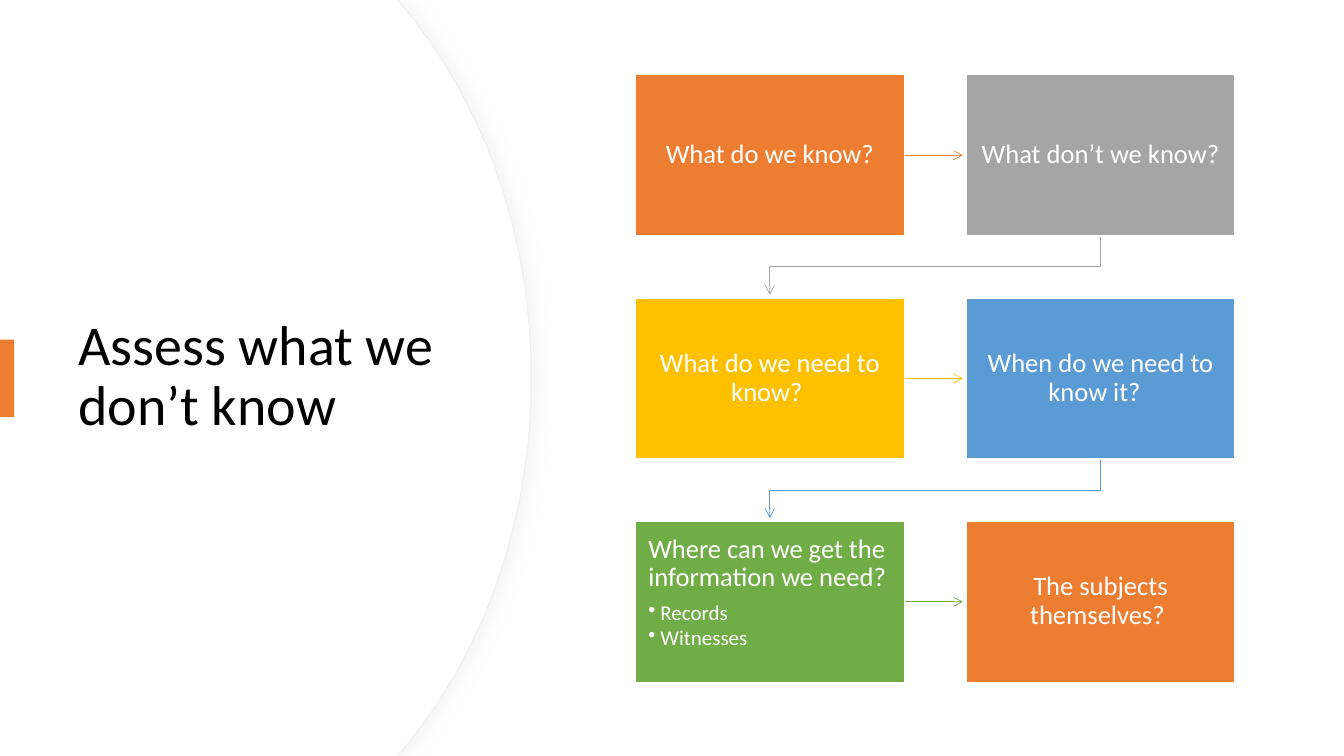
from collections import namedtuple
from dataclasses import dataclass

from lxml import etree
from pptx import Presentation
from pptx import util as u
from pptx.dml.color import RGBColor
from pptx.enum import shapes, text
from pptx.oxml.ns import qn

Box = namedtuple("Box", "left top width height")


@dataclass(frozen=True)
class Theme:
    font: str = "Calibri"
    title_size: float = 40
    card_size: float = 19
    bullet_size: float = 15
    white: str = "FFFFFF"
    black: str = "000000"
    edge: str = "EFEFEF"
    shade: str = "D9D9D9"
    orange: str = "ED7D31"
    gray: str = "A5A5A5"
    gold: str = "FFC000"
    blue: str = "5B9BD5"
    green: str = "70AD47"


THEME = Theme()
CARDS = [
    (THEME.orange, "What do we know?", []),
    (THEME.gray, "What don’t we know? ", []),
    (THEME.gold, "What do we need to know? ", []),
    (THEME.blue, "When do we need to know it?  ", []),
    (THEME.green, "Where can we get the information we need?", ["Records", "Witnesses"]),
    (THEME.orange, "The subjects themselves? ", []),
]


def apply_format(target, values):
    for name, value in values.items():
        setattr(target, name, value)


def emu(lengths):
    return [u.Inches(length) for length in lengths]


def add_xml(parent, tag, **values):
    node = etree.SubElement(parent, qn(tag))
    for name, value in values.items():
        node.set(name, str(value))
    return node


def stroke(shape, color, width):
    shape.line.color.rgb = RGBColor.from_string(color)
    shape.line.width = u.Pt(width)


def paint(shape, fill=None, line=None, width=1):
    shape.shadow.inherit = False
    if fill:
        shape.fill.solid()
        shape.fill.fore_color.rgb = RGBColor.from_string(fill)
    else:
        shape.fill.background()
    if line:
        stroke(shape, line, width)
    else:
        shape.line.fill.background()


def add_arrowhead(shape):
    add_xml(shape.line._get_or_add_ln(), "a:tailEnd", type="arrow")


def add_outline(page, points, close):
    start, *rest = [emu(point) for point in points]
    builder = page.shapes.build_freeform(*start, scale=1.0)
    builder.add_line_segments(rest, close=close)
    return builder.convert_to_shape()


def write_para(para, words, size, color, **values):
    apply_format(para, {"line_spacing": 0.9, **values})
    span = para.add_run()
    span.text = words
    apply_format(span.font, {"name": THEME.font, "size": u.Pt(size)})
    span.font.color.rgb = RGBColor.from_string(color)


def bend_segment(segment, *points):
    curve = etree.Element(qn("a:cubicBezTo"))
    for x, y in map(emu, points):
        add_xml(curve, "a:pt", x=x, y=y)
    segment.getparent().replace(segment, curve)


def draw_curved_panel(page, box):
    right, bottom, middle = box.width, box.height, box.height / 2
    bend, pull = right - 1.26, right - 0.48
    corners = [(0, 0), (bend - 0.07, 0), (bend, 0.08), (right, middle),
               (bend, bottom - 0.08), (bend - 0.07, bottom), (0, bottom)]
    panel = add_outline(page, [(box.left + x, box.top + y) for x, y in corners], True)
    segments = list(panel._element.iter(qn("a:lnTo")))
    bend_segment(segments[2], (pull, 1.02), (right, 2.32), corners[3])
    bend_segment(segments[3], (right, bottom - 2.32), (pull, bottom - 1.02), corners[4])
    return panel


def draw_title_region(page, box):
    panel = draw_curved_panel(page, box)
    paint(panel, THEME.white, THEME.edge, 0.75)
    effects = panel._element.spPr.find(qn("a:effectLst"))
    shadow = add_xml(effects, "a:outerShdw", blurRad=u.Pt(14), dist=u.Pt(3), dir=0)
    color = add_xml(shadow, "a:srgbClr", val=THEME.shade)
    add_xml(color, "a:alpha", val=30000)
    paint(draw_curved_panel(page, box._replace(width=box.width - 0.01)), THEME.white)

    title = page.shapes.add_textbox(*emu((box.left + 0.68, box.top + 1.27, 3.94, 4.95)))
    frame = title.text_frame
    apply_format(frame, {"word_wrap": True, "vertical_anchor": text.MSO_ANCHOR.MIDDLE})
    write_para(frame.paragraphs[0], "Assess what we don’t know", THEME.title_size, THEME.black)

    marker = page.shapes.add_shape(
        shapes.MSO_SHAPE.RECTANGLE, *emu((box.left, box.top + 3.37, 0.14, 0.77)))
    paint(marker, THEME.orange)


def draw_card(page, box, color, question, bullets):
    card = page.shapes.add_shape(shapes.MSO_SHAPE.RECTANGLE, *emu(box))
    paint(card, color, THEME.white)
    frame = card.text_frame
    apply_format(frame, {
        "word_wrap": True,
        "vertical_anchor": text.MSO_ANCHOR.TOP if bullets else text.MSO_ANCHOR.MIDDLE,
        "margin_left": u.Inches(0.13), "margin_right": u.Inches(0.13),
        "margin_top": u.Inches(0.14), "margin_bottom": u.Inches(0.14),
    })
    align = text.PP_ALIGN.LEFT if bullets else text.PP_ALIGN.CENTER
    write_para(frame.paragraphs[0], question, THEME.card_size, THEME.white,
               alignment=align, space_after=u.Pt(0.35 * THEME.card_size))
    for words in bullets:
        para = frame.add_paragraph()
        write_para(para, words, THEME.bullet_size, THEME.white, level=1,
                   alignment=align, space_after=u.Pt(0.15 * THEME.bullet_size))
        props = para._p.get_or_add_pPr()
        props.set("marL", str(u.Inches(0.12)))
        props.set("indent", str(u.Inches(-0.12)))
        add_xml(props, "a:buChar", char="•")
        add_xml(para._p, "a:endParaRPr", sz=THEME.bullet_size * 100)


def draw_side_arrow(page, start, end, color):
    y = start.top + start.height / 2
    arrow = page.shapes.add_connector(
        shapes.MSO_CONNECTOR.STRAIGHT,
        *emu((start.left + start.width, y, end.left - 0.03, y)))
    stroke(arrow, color, 0.5)
    add_arrowhead(arrow)
    add_xml(arrow._element.spPr, "a:effectLst")


def draw_return_arrow(page, start, end, color):
    x1, x2 = (card.left + card.width / 2 for card in (start, end))
    y1, y2 = start.top + start.height, end.top
    turn = (y1 + y2) / 2
    points = [(x1, y1), (x1, turn), (x2, turn), (x2, y2 - 0.03)]
    arrow = add_outline(page, points, False)
    paint(arrow, None, color, 0.5)
    add_arrowhead(arrow)


def draw_question_flow(page, box):
    width, height = 2.67, 1.6
    column_step, row_step = box.width - width, (box.height - height) / 2
    cells = [
        Box(box.left + i % 2 * column_step, box.top + i // 2 * row_step, width, height)
        for i in range(len(CARDS))
    ]
    for i, (cell, card) in enumerate(zip(cells, CARDS)):
        if i + 1 < len(cells):
            draw_arrow = draw_return_arrow if i % 2 else draw_side_arrow
            draw_arrow(page, cell, cells[i + 1], card[0])
        draw_card(page, cell, *card)


def main():
    deck = Presentation()
    apply_format(deck, {"slide_width": u.Inches(13.33), "slide_height": u.Inches(7.5)})
    page = deck.slides.add_slide(deck.slide_layouts[6])
    draw_title_region(page, Box(0, 0, 5.27, 7.5))
    draw_question_flow(page, Box(6.3, 0.74, 5.95, 6.03))
    deck.save("out.pptx")


if __name__ == "__main__":
    main()
